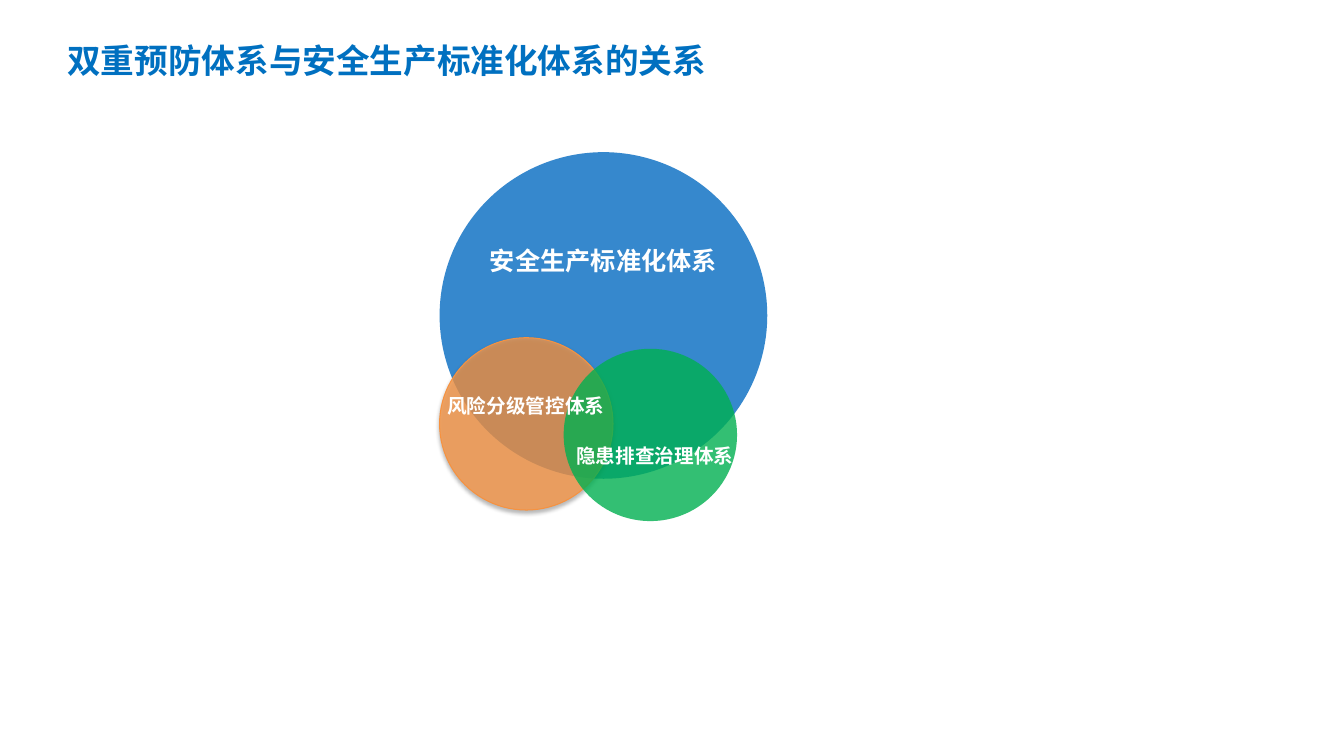
import lxml.etree
import pptx
import pptx.dml.color
import pptx.enum.shapes
import pptx.enum.text
import pptx.oxml.ns
import pptx.util

Inches = pptx.util.Inches
Pt = pptx.util.Pt
qn = pptx.oxml.ns.qn

COLORS = {
    "title": "0070C0",
    "standard": "0E70C3",
    "risk": "F79646",
    "risk_line": "F69240",
    "hazard": "00B050",
    "label": "FFFFFF",
    "shadow": "000000",
}


class Deck:
    font = "Noto Sans CJK SC"

    def __init__(self):
        self.prs = pptx.Presentation()
        self.prs.slide_width = Inches(13.33)
        self.prs.slide_height = Inches(7.5)
        self.s = self.prs.slides.add_slide(self.prs.slide_layouts[6])

    def rgb(self, name):
        return pptx.dml.color.RGBColor.from_string(COLORS[name])

    def alpha(self, clr, percent):
        lxml.etree.SubElement(clr, qn("a:alpha"), val=str(percent * 1000))

    def circle(self, x, y, w, h, color, opacity, line=None):
        oval = pptx.enum.shapes.MSO_SHAPE.OVAL
        sp = self.s.shapes.add_shape(oval, Inches(x), Inches(y), Inches(w), Inches(h))
        sp.shadow.inherit = False
        sp.fill.solid()
        sp.fill.fore_color.rgb = self.rgb(color)
        self.alpha(sp.element.spPr.find(".//" + qn("a:srgbClr")), opacity)
        if line:
            sp.line.color.rgb = self.rgb(line)
            sp.line.width = Pt(0.75)
        else:
            sp.line.fill.background()
        return sp

    def drop_shadow(self, sp, opacity, blur, dist, angle):
        effects = sp.element.spPr.find(qn("a:effectLst"))
        shadow = lxml.etree.SubElement(
            effects, qn("a:outerShdw"), blurRad=str(Pt(blur)), dist=str(Pt(dist)),
            dir=str(angle * 60000), rotWithShape="0")
        clr = lxml.etree.SubElement(shadow, qn("a:srgbClr"), val=COLORS["shadow"])
        self.alpha(clr, opacity)

    def text(self, x, y, w, h, text, size, color):
        sp = self.s.shapes.add_textbox(Inches(x), Inches(y), Inches(w), Inches(h))
        tf = sp.text_frame
        tf.word_wrap = True
        p = tf.paragraphs[0]
        r = p.add_run()
        r.text = text
        r.font.size = Pt(size)
        r.font.bold = True
        r.font.name = self.font
        r.font.color.rgb = self.rgb(color)
        lxml.etree.SubElement(r.font._element, qn("a:ea"), typeface=self.font)
        return tf

    def title(self, text):
        tf = self.text(0.57, 0.35, 7.8, 0.5, text, 24, "title")
        tf.auto_size = pptx.enum.text.MSO_AUTO_SIZE.SHAPE_TO_FIT_TEXT

    def label(self, x, y, text, size):
        p = self.text(x, y, 2.55, 0.49, text, size, "label").paragraphs[0]
        p.alignment = pptx.enum.text.PP_ALIGN.CENTER
        p.line_spacing = 0.9
        p.space_before = Pt(10)


def main():
    deck = Deck()
    deck.title("双重预防体系与安全生产标准化体系的关系")
    deck.circle(4.36, 1.51, 3.25, 3.24, "standard", 83)
    risk = deck.circle(4.36, 3.35, 1.72, 1.71, "risk", 78, "risk_line")
    deck.drop_shadow(risk, 35, 3.1, 1.8, 90)
    deck.label(4.71, 2.42, "安全生产标准化体系", 18)
    deck.circle(5.59, 3.46, 1.72, 1.71, "hazard", 80)
    deck.label(3.94, 3.88, "风险分级管控体系", 14)
    deck.label(5.22, 4.38, "隐患排查治理体系", 14)
    deck.prs.save("out.pptx")


if __name__ == "__main__":
    main()
